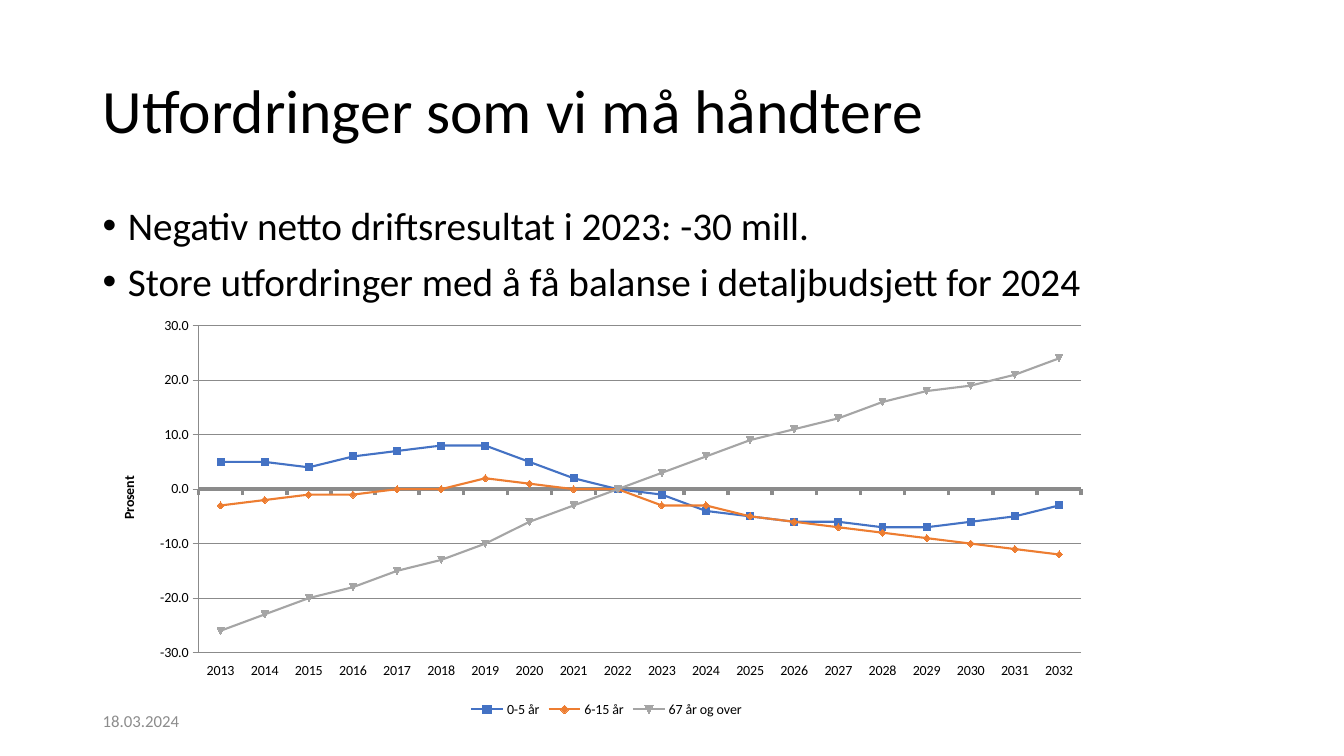
from dataclasses import dataclass

from lxml.etree import SubElement
from pptx import Presentation
from pptx.chart.data import CategoryChartData
from pptx.dml.color import RGBColor
from pptx.enum.chart import (XL_CHART_TYPE, XL_LEGEND_POSITION, XL_TICK_LABEL_POSITION,
                             XL_TICK_MARK)
from pptx.enum.text import MSO_ANCHOR
from pptx.oxml import parse_xml
from pptx.oxml.ns import nsdecls, qn
from pptx.util import Pt

FONT = "Calibri"
COLORS = {
    "text": "000000",
    "date": "8C8C8C",
    "axis": "8B8B8B",
    "young": "4472C4",
    "school": "ED7D31",
    "senior": "A5A5A5",
}


@dataclass
class TextBlock:
    left: float
    top: float
    width: float
    height: float
    lines: list[str]
    size: float
    color: str = "text"
    anchor: MSO_ANCHOR = MSO_ANCHOR.MIDDLE
    line_spacing: float = 1.0
    space_before: float = 0
    bullets: bool = False


@dataclass
class AgeGroup:
    name: str
    color: str
    values: list[int]


TEXT_BLOCKS = [
    TextBlock(66.25, 28.75, 828, 104.4, ["Utfordringer som vi må håndtere"], 44,
              line_spacing=0.9),
    TextBlock(66.25, 143.75, 828, 342.6,
              ["Negativ netto driftsresultat i 2023: -30 mill.",
               "Store utfordringer med å få balanse i detaljbudsjett for 2024"],
              28, anchor=MSO_ANCHOR.TOP, line_spacing=0.9, space_before=10, bullets=True),
    TextBlock(66.25, 500.5, 216, 28.75, ["18.03.2024"], 12, color="date"),
]

AGE_GROUPS = [
    AgeGroup("0-5 år", "young",
             [5, 5, 4, 6, 7, 8, 8, 5, 2, 0, -1, -4, -5, -6, -6, -7, -7, -6, -5, -3]),
    AgeGroup("6-15 år", "school",
             [-3, -2, -1, -1, 0, 0, 2, 1, 0, 0, -3, -3, -5, -6, -7, -8, -9, -10, -11, -12]),
    AgeGroup("67 år og over", "senior",
             [-26, -23, -20, -18, -15, -13, -10, -6, -3, 0,
              3, 6, 9, 11, 13, 16, 18, 19, 21, 24]),
]
PLOT_LAYOUT = {"x": 0.083, "y": 0.038, "w": 0.902, "h": 0.795}


def rgb(name: str) -> RGBColor:
    return RGBColor.from_string(COLORS[name])


def style_font(font, size: float, color: str = "text", bold: bool = False) -> None:
    font.name = FONT
    font.size = Pt(size)
    font.bold = bold
    font.color.rgb = rgb(color)


def style_line(line, color: str, width: float) -> None:
    line.color.rgb = rgb(color)
    line.width = Pt(width)


def add_text(page, block: TextBlock) -> None:
    box = page.shapes.add_textbox(Pt(block.left), Pt(block.top), Pt(block.width), Pt(block.height))
    frame = box.text_frame
    frame.word_wrap = True
    frame.vertical_anchor = block.anchor
    for index, line in enumerate(block.lines):
        para = frame.add_paragraph() if index else frame.paragraphs[0]
        para.line_spacing = block.line_spacing
        para.space_before = Pt(block.space_before if index else 0)
        if block.bullets:
            properties = para._p.get_or_add_pPr()
            properties.set("marL", str(Pt(18)))
            properties.set("indent", str(-Pt(18)))
            SubElement(properties, qn("a:buFont"), typeface="Arial")
            SubElement(properties, qn("a:buChar"), char="•")
        span = para.add_run()
        span.text = line
        style_font(span.font, block.size, block.color)


def place_plot(chart) -> None:
    """Fix the inner plot area as fractions of the chart."""
    edges = "".join(f'<c:{key}Mode val="edge"/>' for key in "xy")
    sizes = "".join(f'<c:{key} val="{value}"/>' for key, value in PLOT_LAYOUT.items())
    layout = parse_xml(f'<c:layout {nsdecls("c")}><c:manualLayout>'
                       f'<c:layoutTarget val="inner"/>{edges}{sizes}'
                       '</c:manualLayout></c:layout>')
    plot_area = chart._chartSpace.chart.plotArea
    for old_layout in plot_area.findall(qn("c:layout")):
        plot_area.remove(old_layout)
    plot_area.insert(0, layout)


def add_forecast_chart(page, groups: list[AgeGroup]) -> None:
    data = CategoryChartData(number_format="0.0")
    data.categories = [str(year) for year in range(2013, 2033)]
    for group in groups:
        data.add_series(group.name, group.values)
    chart = page.shapes.add_chart(XL_CHART_TYPE.LINE_MARKERS, Pt(83.75), Pt(221.5),
                                  Pt(699), Pt(293.75), data).chart
    chart.has_title = False
    style_font(chart.font, 10)
    place_plot(chart)

    # Lines with automatic marker shapes
    chart.plots[0].vary_by_categories = False
    for series, group in zip(chart.plots[0].series, groups):
        series.smooth = False
        style_line(series.format.line, group.color, 1.5)
        marker = series.marker
        marker.size = 5
        marker.format.fill.solid()
        marker.format.fill.fore_color.rgb = rgb(group.color)
        style_line(marker.format.line, group.color, 0.75)

    # Axes
    years, percent = chart.category_axis, chart.value_axis
    for axis, width in ((years, 2.5), (percent, 0.75)):
        axis.major_tick_mark = XL_TICK_MARK.OUTSIDE
        axis.minor_tick_mark = XL_TICK_MARK.NONE
        style_line(axis.format.line, "axis", width)
        style_font(axis.tick_labels.font, 10)
    years.tick_label_position = XL_TICK_LABEL_POSITION.LOW
    percent.minimum_scale, percent.maximum_scale, percent.major_unit = -30, 30, 10
    percent.tick_labels.number_format = "0.0"
    percent.tick_labels.number_format_is_linked = False
    percent.has_major_gridlines = True
    style_line(percent.major_gridlines.format.line, "axis", 0.75)
    span = percent.axis_title.text_frame.paragraphs[0].add_run()
    span.text = "Prosent"
    style_font(span.font, 10, bold=True)

    # Legend
    chart.has_legend = True
    chart.legend.position = XL_LEGEND_POSITION.BOTTOM
    chart.legend.include_in_layout = False
    style_font(chart.legend.font, 10)


def main() -> None:
    deck = Presentation()
    deck.slide_width, deck.slide_height = Pt(960), Pt(540)
    page = deck.slides.add_slide(deck.slide_layouts[6])
    for block in TEXT_BLOCKS:
        add_text(page, block)
    add_forecast_chart(page, AGE_GROUPS)
    deck.save("out.pptx")


if __name__ == "__main__":
    main()
